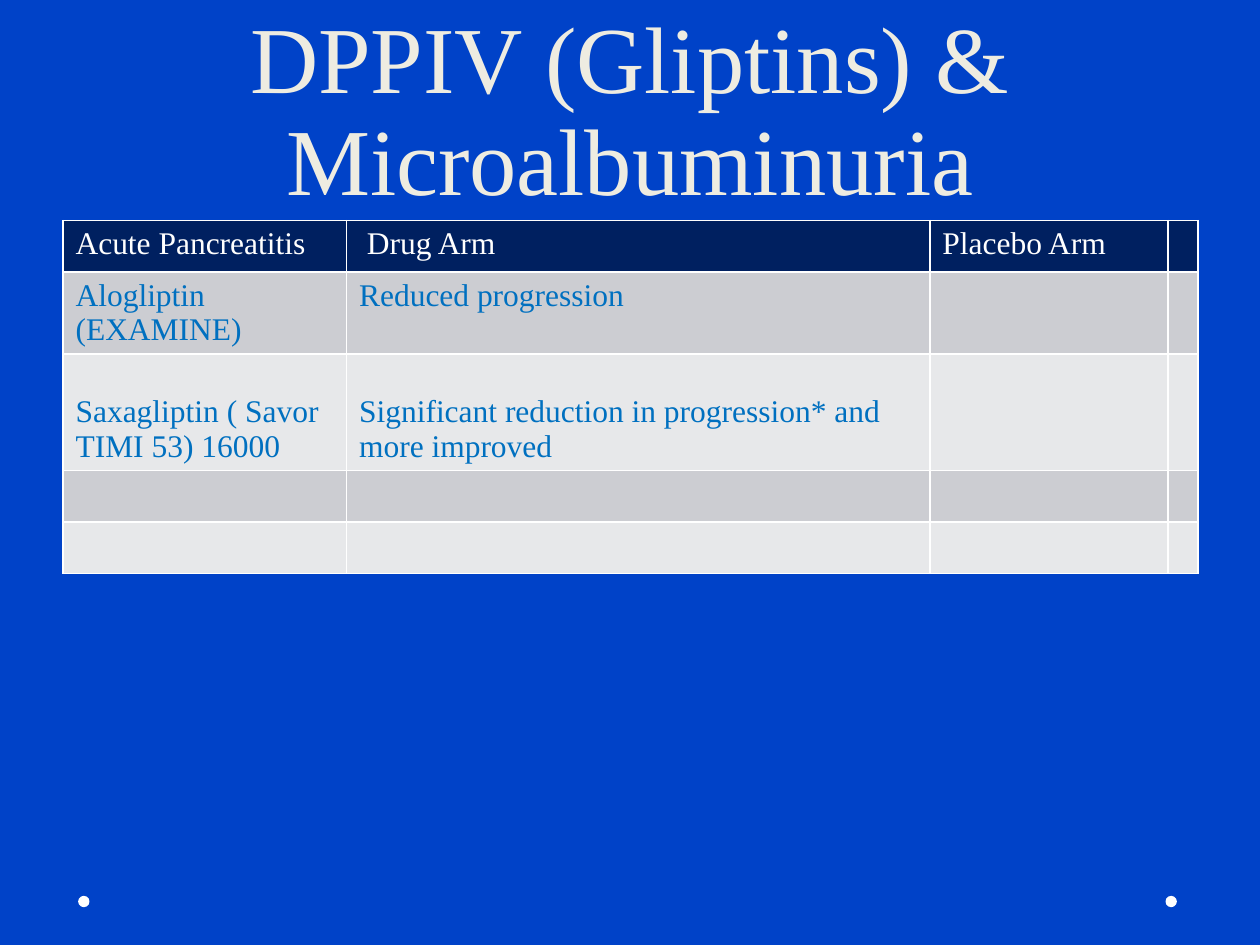
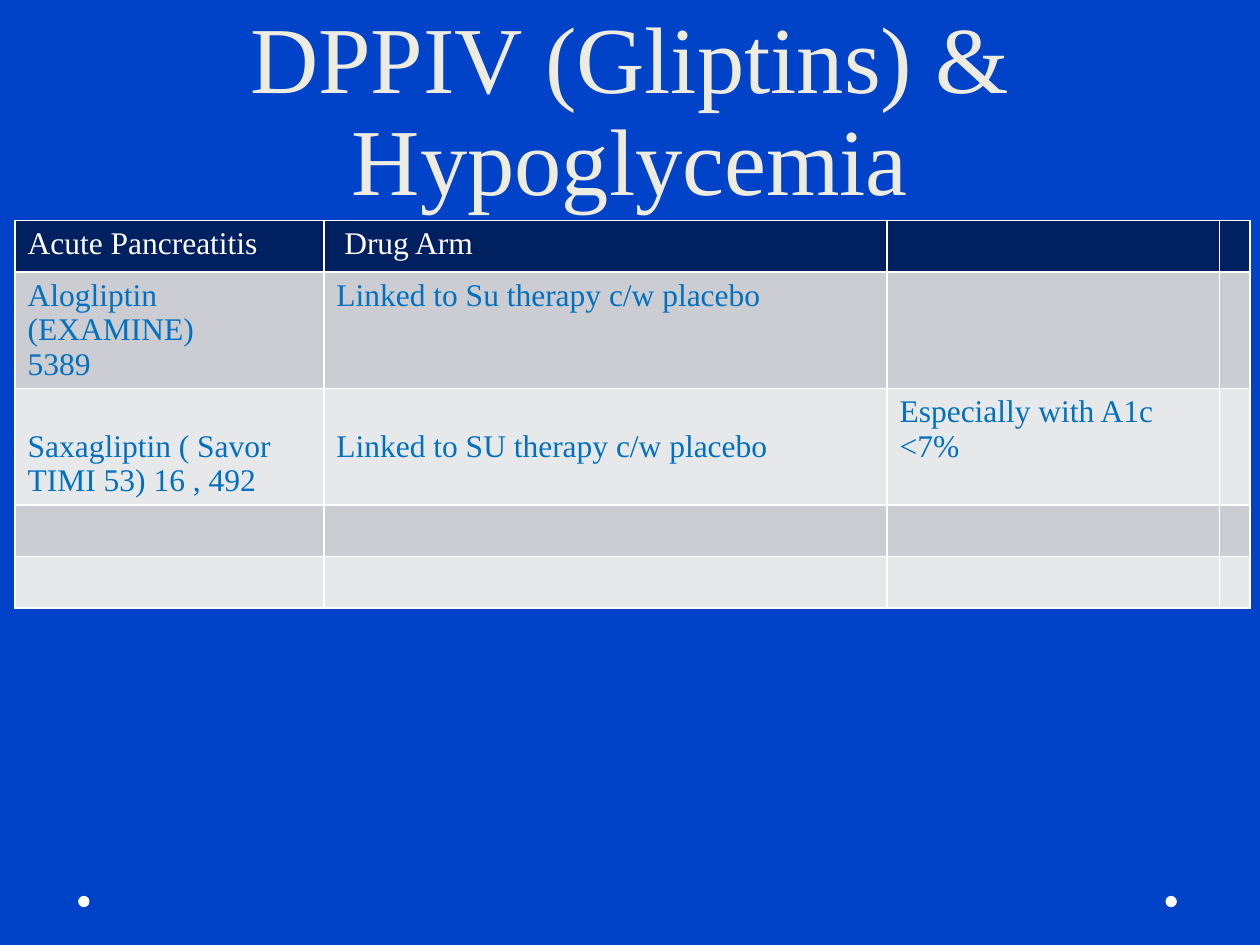
from dataclasses import dataclass

from lxml.etree import SubElement
from pptx import Presentation
from pptx.dml.color import RGBColor
from pptx.enum.shapes import MSO_SHAPE
from pptx.enum.text import MSO_ANCHOR, PP_ALIGN
from pptx.oxml.ns import qn
from pptx.util import Inches, Pt

COLORS = {
    "background": "0042C8",
    "title": "EEECE1",
    "header": "002060",
    "white": "FFFFFF",
    "body": "0070C0",
    "odd_row": "CCCDD2",
    "even_row": "E7E8EA",
}
FONT = "Times New Roman"
SLIDE_WIDTH = Inches(10)
SLIDE_HEIGHT = Inches(7.5)
TITLE_HEIGHT = Inches(1.75)
LINE_HEIGHT = Pt(19.75)
CELL_MARGIN = Inches(0.05)
MINIMUM_ROW = Inches(0.41)
DOT_SIZE = Inches(0.09)


@dataclass
class Box:
    left: int
    top: int
    width: int
    height: int


@dataclass
class TrialSlide:
    title: str
    table_left: float
    columns: tuple
    row_lines: tuple
    rows: list
    lowered_cells: tuple = ((2, 0), (2, 1))


TRIAL_SLIDES = [
    TrialSlide(
        title="DPPIV (Gliptins) & Microalbuminuria",
        table_left=0.5,
        columns=(2.25, 4.63, 1.89, 0.23),
        row_lines=(1, 2, 3, 1, 1),
        rows=[
            ["Acute Pancreatitis", " Drug Arm", "Placebo Arm"],
            ["Alogliptin (EXAMINE)", "Reduced progression"],
            ["Saxagliptin ( Savor TIMI 53) 16000",
             "Significant reduction in progression* and more improved"],
        ],
    ),
    TrialSlide(
        title="DPPIV (Gliptins) & Hypoglycemia",
        table_left=0.12,
        columns=(2.45, 4.47, 2.64, 0.23),
        row_lines=(1, 3, 3, 1, 1),
        rows=[
            ["Acute Pancreatitis", " Drug Arm"],
            ["Alogliptin (EXAMINE)\n5389", "Linked to Su therapy c/w placebo"],
            ["Saxagliptin ( Savor TIMI 53) 16 , 492",
             "Linked to SU therapy c/w placebo", "Especially with A1c <7%"],
        ],
    ),
]


def color(name):
    return RGBColor.from_string(COLORS[name])


def style_paragraph(paragraph, size, color_name, line_spacing):
    paragraph.font.name = FONT
    paragraph.font.size = Pt(size)
    paragraph.font.color.rgb = color(color_name)
    paragraph.line_spacing = line_spacing


def add_footer_dots(slide, box):
    for left in (box.left, box.left + box.width - DOT_SIZE):
        dot = slide.shapes.add_shape(MSO_SHAPE.OVAL, left, box.top, DOT_SIZE, box.height)
        dot.shadow.inherit = False
        dot.fill.solid()
        dot.fill.fore_color.rgb = color("white")
        dot.line.fill.background()


def add_title(slide, box, text):
    shape = slide.shapes.add_textbox(box.left, box.top, box.width, box.height)
    frame = shape.text_frame
    frame.word_wrap = True
    frame.vertical_anchor = MSO_ANCHOR.BOTTOM
    frame.text = text
    paragraph = frame.paragraphs[0]
    paragraph.alignment = PP_ALIGN.CENTER
    style_paragraph(paragraph, 54, "title", Pt(58))


def set_borders(cell):
    properties = cell._tc.get_or_add_tcPr()
    for side in ("a:lnL", "a:lnR", "a:lnT", "a:lnB"):
        border = SubElement(properties, qn(side), w=str(Pt(1)))
        fill = SubElement(border, qn("a:solidFill"))
        SubElement(fill, qn("a:srgbClr"), val=COLORS["white"])


def fill_cell(cell, text, fill_name, text_color):
    set_borders(cell)
    cell.fill.solid()
    cell.fill.fore_color.rgb = color(fill_name)
    cell.text = text
    for paragraph in cell.text_frame.paragraphs:
        style_paragraph(paragraph, 18, text_color, LINE_HEIGHT)


def add_trial_table(slide, box, content):
    row_count, column_count = len(content.row_lines), len(content.columns)
    table = slide.shapes.add_table(
        row_count, column_count, box.left, box.top, box.width, box.height).table
    for column, share in zip(table.columns, content.columns):
        column.width = int(box.width * share / sum(content.columns))
    for row_index, lines in enumerate(content.row_lines):
        row = table.rows[row_index]
        row.height = max(MINIMUM_ROW, 2 * CELL_MARGIN + lines * LINE_HEIGHT)
        texts = content.rows[row_index] if row_index < len(content.rows) else []
        banding = "odd_row" if row_index % 2 else "even_row"
        fill_name, text_color = (banding, "body") if row_index else ("header", "white")
        for column_index, cell in enumerate(row.cells):
            text = texts[column_index] if column_index < len(texts) else ""
            fill_cell(cell, text, fill_name, text_color)
    for position in content.lowered_cells:
        table.cell(*position).margin_top = CELL_MARGIN + LINE_HEIGHT


def add_trial_slide(presentation, content):
    slide = presentation.slides.add_slide(presentation.slide_layouts[6])
    slide.background.fill.solid()
    slide.background.fill.fore_color.rgb = color("background")
    add_footer_dots(slide, Box(Inches(0.62), Inches(7.11), Inches(8.72), DOT_SIZE))
    add_title(slide, Box(int(SLIDE_WIDTH * 0.05), 0, int(SLIDE_WIDTH * 0.9), TITLE_HEIGHT),
              content.title)
    table_box = Box(Inches(content.table_left), TITLE_HEIGHT,
                    Inches(sum(content.columns)), MINIMUM_ROW * len(content.row_lines))
    add_trial_table(slide, table_box, content)


def main():
    presentation = Presentation()
    presentation.slide_width = SLIDE_WIDTH
    presentation.slide_height = SLIDE_HEIGHT
    for content in TRIAL_SLIDES:
        add_trial_slide(presentation, content)
    presentation.save("out.pptx")


if __name__ == "__main__":
    main()
